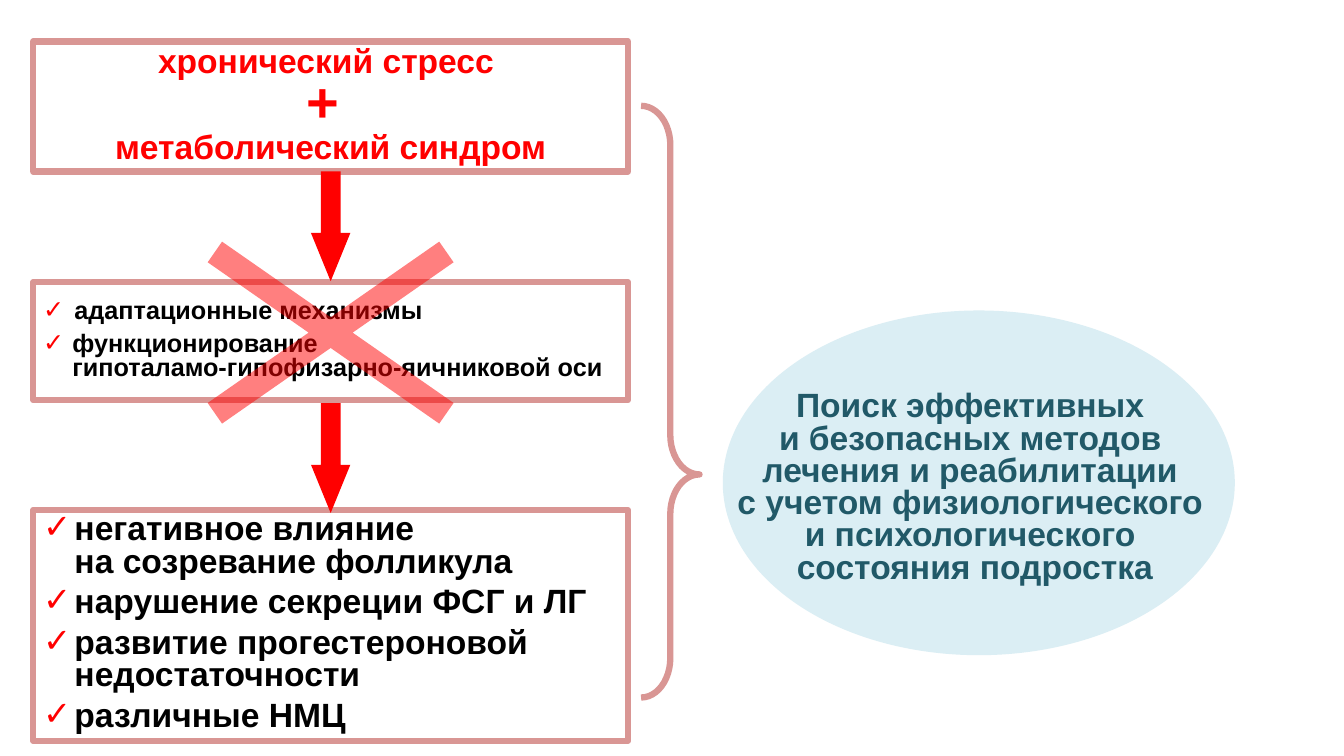
from lxml import etree
from pptx import Presentation
from pptx.dml.color import RGBColor
from pptx.enum.shapes import MSO_SHAPE
from pptx.enum.text import MSO_ANCHOR, PP_ALIGN
from pptx.oxml.ns import qn
from pptx.util import Inches, Pt

RECTANGLE = MSO_SHAPE.RECTANGLE
OVAL = MSO_SHAPE.OVAL
CROSS = MSO_SHAPE.MATH_MULTIPLY
DOWN_ARROW = MSO_SHAPE.DOWN_ARROW
RIGHT_BRACE = MSO_SHAPE.RIGHT_BRACE
TOP, MIDDLE = MSO_ANCHOR.TOP, MSO_ANCHOR.MIDDLE
LEFT, CENTER = PP_ALIGN.LEFT, PP_ALIGN.CENTER

RED = RGBColor(0xFF, 0x00, 0x00)
ROSE = RGBColor(0xD9, 0x96, 0x94)
PALE_BLUE = RGBColor(0xDB, 0xEE, 0xF4)
TEAL = RGBColor(0x21, 0x59, 0x68)
BLACK = RGBColor(0x00, 0x00, 0x00)

FONT = "Arial"
SLIDE_WIDTH, SLIDE_HEIGHT = Inches(13.33), Inches(7.5)
COLUMN_LEFT, COLUMN_WIDTH = 2.48, 44.25
COLUMN_CENTER = COLUMN_LEFT + COLUMN_WIDTH / 2
ARROW_WIDTH, ARROW_HEIGHT = 2.93, 14.53
CROSS_WIDTH = 33.15
GOAL_LEFT = 53.78

STRESS = [("хронический стресс ", 24), ("+ ", 40), ("метаболический синдром", 24)]
MECHANISMS = [
    ("адаптационные механизмы", 0.31),
    ("функционирование \nгипоталамо-гипофизарно-яичниковой оси", 0.29),
]
EFFECTS = [
    ("негативное влияние \nна созревание фолликула", 0.31),
    ("нарушение секреции ФСГ и ЛГ", 0.31),
    ("развитие прогестероновой недостаточности", 0.31),
    ("различные НМЦ", 0.31),
]
GOAL = (
    "Поиск эффективных \nи безопасных методов \nлечения и реабилитации \n"
    "с учетом физиологического \nи психологического \nсостояния подростка"
)


def place(left, top, width, height):
    return (
        round(SLIDE_WIDTH * left / 100),
        round(SLIDE_HEIGHT * top / 100),
        round(SLIDE_WIDTH * width / 100),
        round(SLIDE_HEIGHT * height / 100),
    )


def add_figure(page, kind, area, fill=None, line=None, adjustments=()):
    figure = page.shapes.add_shape(kind, *place(*area))
    figure.shadow.inherit = False
    if fill is None:
        figure.fill.background()
    else:
        figure.fill.solid()
        figure.fill.fore_color.rgb = fill
    if line is None:
        figure.line.fill.background()
    else:
        figure.line.color.rgb = line
        figure.line.width = Pt(4.5)
    for index, value in enumerate(adjustments):
        figure.adjustments[index] = value
    return figure


def add_frame(page, top, height, anchor=MIDDLE):
    area = (COLUMN_LEFT, top, COLUMN_WIDTH, height)
    frame = add_figure(page, RECTANGLE, area, line=ROSE).text_frame
    frame.word_wrap = True
    frame.vertical_anchor = anchor
    return frame


def style_paragraph(para, color, align, size=None, space_after=6):
    para.alignment = align
    para.line_spacing = 0.8
    para.space_after = Pt(space_after)
    para.font.name = FONT
    para.font.bold = True
    para.font.color.rgb = color
    if size:
        para.font.size = Pt(size)


def add_check_mark(para, indent):
    properties = para._p.get_or_add_pPr()
    properties.set("marL", str(Inches(indent)))
    properties.set("indent", str(-Inches(indent)))
    color = etree.SubElement(properties, qn("a:buClr"))
    etree.SubElement(color, qn("a:srgbClr"), val=str(RED))
    etree.SubElement(properties, qn("a:buFont"), typeface=FONT)
    etree.SubElement(properties, qn("a:buChar"), char="✓")


def fill_checklist(frame, items, size):
    for index, (text, indent) in enumerate(items):
        para = frame.add_paragraph() if index else frame.paragraphs[0]
        para.text = text.replace("\n", "\v")
        add_check_mark(para, indent)
        style_paragraph(para, BLACK, LEFT, size)


def fill_heading(frame, lines):
    para = frame.paragraphs[0]
    for index, (text, size) in enumerate(lines):
        if index:
            para.add_line_break()
        span = para.add_run()
        span.text = text
        span.font.size = Pt(size)
    style_paragraph(para, RED, CENTER, space_after=0)


def add_cross(page):
    area = (COLUMN_CENTER - CROSS_WIDTH / 2, 23.47, CROSS_WIDTH, 41.07)
    cross = add_figure(page, CROSS, area, fill=RED, adjustments=[0.081])
    color = cross.fill._xPr.find(qn("a:solidFill"))[0]
    etree.SubElement(color, qn("a:alpha"), val="50000")


def add_down_arrow(page, top):
    area = (COLUMN_CENTER - ARROW_WIDTH / 2, top, ARROW_WIDTH, ARROW_HEIGHT)
    add_figure(page, DOWN_ARROW, area, fill=RED, adjustments=[0.5, 1.224])


def add_goal(page):
    box = page.shapes.add_textbox(*place(GOAL_LEFT, 49.87, 37.5, 29.6))
    frame = box.text_frame
    frame.word_wrap = True
    frame.vertical_anchor = MIDDLE
    frame.margin_left = frame.margin_right = 0
    frame.margin_top = frame.margin_bottom = 0
    para = frame.paragraphs[0]
    para.text = GOAL.replace("\n", "\v")
    style_paragraph(para, TEAL, CENTER, 24)


def main():
    deck = Presentation()
    deck.slide_width, deck.slide_height = SLIDE_WIDTH, SLIDE_HEIGHT
    page = deck.slides.add_slide(deck.slide_layouts[6])

    add_figure(page, OVAL, (GOAL_LEFT, 41.07, 38.1, 45.6), fill=PALE_BLUE)
    fill_heading(add_frame(page, 5.47, 17.2), STRESS)
    fill_checklist(add_frame(page, 37.33, 15.6), MECHANISMS, 18)
    add_cross(page)
    add_down_arrow(page, 22.67)
    fill_checklist(add_frame(page, 67.47, 30.53, TOP), EFFECTS, 24)
    add_down_arrow(page, 53.33)
    add_goal(page)
    brace = (47.7, 14, 4.35, 78.27)
    add_figure(page, RIGHT_BRACE, brace, line=ROSE, adjustments=[0.674, 0.623])

    deck.save("out.pptx")


if __name__ == "__main__":
    main()
